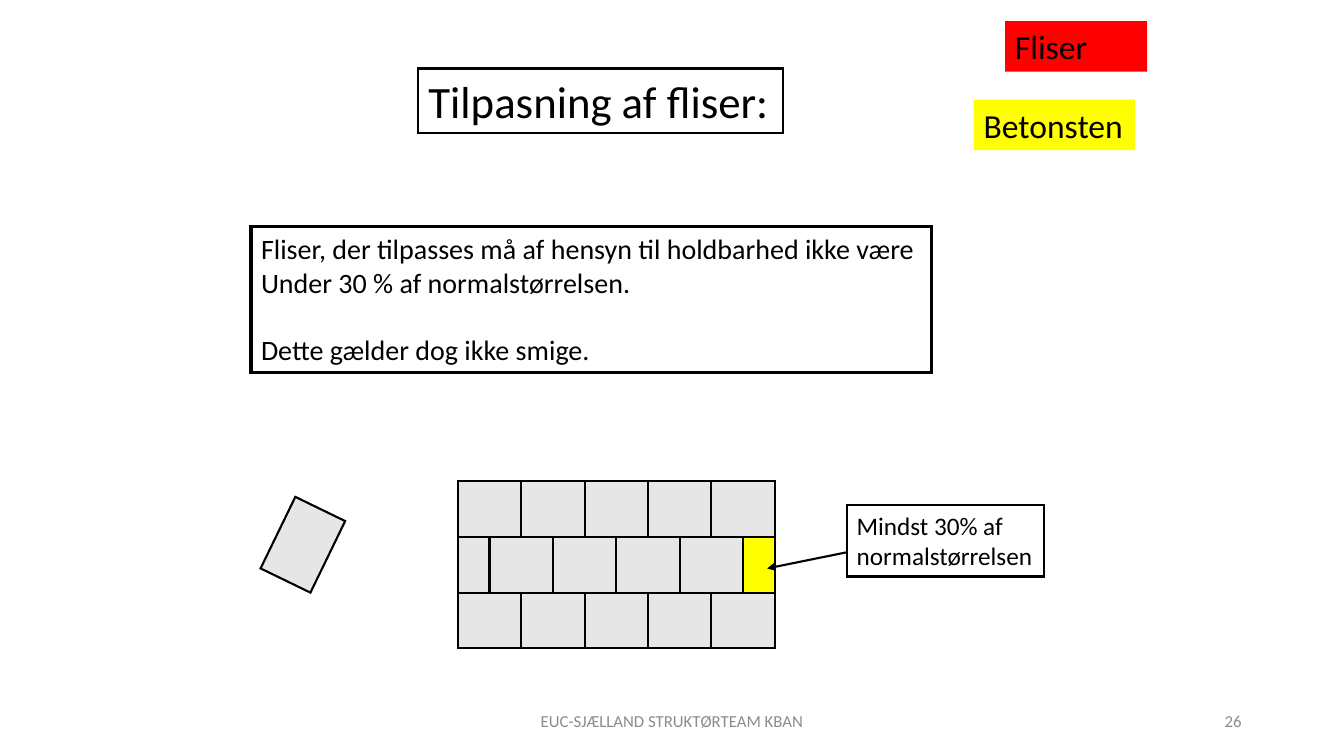
from dataclasses import dataclass
from typing import NamedTuple

from lxml import etree
from pptx import Presentation
from pptx import util as u
from pptx.dml.color import RGBColor
from pptx.enum import shapes, text
from pptx.oxml import ns


@dataclass(frozen=True)
class Theme:
    font: str = "Calibri"
    ink: str = "000000"
    muted: str = "8C8C8C"
    tile: str = "E7E6E6"
    red: str = "FF0000"
    yellow: str = "FFFF00"
    title: int = 32
    tag: int = 24
    body: int = 20
    note: int = 18
    footer: int = 12
    thin: float = 0.75
    line: float = 1.5
    thick: float = 2.25


class Box(NamedTuple):
    """Left, top, width and height in grid columns and rows."""
    x: float
    y: float
    w: float
    h: float


class Label(NamedTuple):
    words: str
    box: Box
    size: int
    fill: str | None = None
    line: float = 0
    wrap: bool = False
    fit: bool = True
    color: str = Theme.ink
    align: text.PP_ALIGN = text.PP_ALIGN.LEFT
    anchor: text.MSO_ANCHOR = text.MSO_ANCHOR.TOP


T = Theme()
COLUMNS, ROWS = 64, 36
WIDTH, HEIGHT = u.Inches(13.333), u.Inches(7.5)

TITLE = Label("Tilpasning af fliser:", Box(19.92, 3.26, 17.38, 3.07), T.title,
              line=T.line, fit=False)
RULE = Label(
    "Fliser, der tilpasses må af hensyn til holdbarhed ikke være\n"
    "Under 30 % af normalstørrelsen.\n"
    "Dette gælder dog ikke smige.",
    Box(11.95, 10.8, 32.4, 6.96), T.body, line=T.thick, fit=False)
FOOTER = dict(size=T.footer, wrap=True, fit=False, color=T.muted, anchor=text.MSO_ANCHOR.MIDDLE)
LABELS = [
    Label("Fliser", Box(47.86, 1.01, 6.77, 2.4), T.tag, fill=T.red, wrap=True),
    Label("Betonsten", Box(46.37, 4.75, 7.68, 2.4), T.tag, fill=T.yellow),
    Label("Mindst 30% af\nnormalstørrelsen", Box(40.32, 24.05, 9.41, 3.41), T.note, line=T.line),
    Label("EUC-SJÆLLAND STRUKTØRTEAM KBAN", Box(21.2, 33.37, 21.6, 1.92),
          align=text.PP_ALIGN.CENTER, **FOOTER),
    Label("26", Box(45.2, 33.37, 14.4, 1.92), align=text.PP_ALIGN.RIGHT, **FOOTER),
]

PAVING_X, PAVING_Y = 21.8, 22.9
TILE_W, TILE_H = 3.02, 2.66
COURSES = [[1] * 5, [0.5, 1, 1, 1, 1, 0.5], [1] * 5]  # tile widths in whole tiles
CUT_TILE = (1, 5)  # course and place of the highlighted tile
LOOSE_TILE = Box(12.53, 24.62, 3.79, 2.64)


def col(n: float) -> u.Emu:
    return u.Emu(round(WIDTH * n / COLUMNS))


def row(n: float) -> u.Emu:
    return u.Emu(round(HEIGHT * n / ROWS))


def place(box: Box) -> tuple[u.Emu, ...]:
    return col(box.x), row(box.y), col(box.w), row(box.h)


def paint(sp, fill: str | None, line: float) -> None:
    if fill:
        sp.fill.solid()
        sp.fill.fore_color.rgb = RGBColor.from_string(fill)
    else:
        sp.fill.background()
    if line:
        stroke(sp, line)
    else:
        sp.line.fill.background()


def stroke(sp, width: float) -> None:
    """Draw the outline in ink, with sharp corners."""
    sp.line.color.rgb = RGBColor.from_string(T.ink)
    sp.line.width = u.Pt(width)
    etree.SubElement(sp.line._get_or_add_ln(), ns.qn("a:miter"), lim="800000")


def write(sp, label: Label) -> None:
    """Place a text shape and give it the label's words and look."""
    sp.left, sp.top, sp.width, sp.height = place(label.box)
    paint(sp, label.fill, label.line)
    tf = sp.text_frame
    tf.text = label.words
    tf.word_wrap = label.wrap
    tf.auto_size = text.MSO_AUTO_SIZE.SHAPE_TO_FIT_TEXT if label.fit else text.MSO_AUTO_SIZE.NONE
    tf.vertical_anchor = label.anchor
    for p in tf.paragraphs:
        p.alignment = label.align
        p.space_before = u.Pt(0)
        for r in p.runs:
            r.font.name = T.font
            r.font.size = u.Pt(label.size)
            r.font.color.rgb = RGBColor.from_string(label.color)


def remove_bullets(sp) -> None:
    for p in sp.text_frame.paragraphs:
        props = p._p.get_or_add_pPr()
        props.set("marL", "0")
        props.set("indent", "0")
        etree.SubElement(props, ns.qn("a:buNone"))


def add_tile(s, box: Box, fill: str = T.tile, rotation: float = 0) -> None:
    sp = s.shapes.add_shape(shapes.MSO_SHAPE.RECTANGLE, *place(box))
    sp.shadow.inherit = False
    sp.rotation = rotation
    paint(sp, fill, T.line)


def add_paving(s) -> None:
    for i, course in enumerate(COURSES):
        for j, share in enumerate(course):
            box = Box(PAVING_X + sum(course[:j]) * TILE_W, PAVING_Y + i * TILE_H,
                      share * TILE_W, TILE_H)
            add_tile(s, box, T.yellow if (i, j) == CUT_TILE else T.tile)


def add_line(s, x1: float, y1: float, x2: float, y2: float, width: float,
             arrow: bool = False) -> None:
    c = s.shapes.add_connector(shapes.MSO_CONNECTOR.STRAIGHT, col(x1), row(y1), col(x2), row(y2))
    stroke(c, width)
    if arrow:
        etree.SubElement(c.line._get_or_add_ln(), ns.qn("a:tailEnd"), type="triangle")
    etree.SubElement(c._element.spPr, ns.qn("a:effectLst"))


def main() -> None:
    prs = Presentation()
    prs.slide_width, prs.slide_height = WIDTH, HEIGHT
    s = prs.slides.add_slide(prs.slide_layouts[1])

    write(s.shapes.title, TITLE)
    body = s.placeholders[1]
    write(body, RULE)
    remove_bullets(body)
    body.text_frame.paragraphs[-1].space_before = u.Pt(24)

    for label in LABELS:
        write(s.shapes.add_textbox(*place(label.box)), label)

    add_tile(s, LOOSE_TILE, rotation=295.9)
    add_paving(s)
    add_line(s, PAVING_X, PAVING_Y, PAVING_X, PAVING_Y + len(COURSES) * TILE_H, T.thin)
    add_line(s, 40.32, 26.3, 36.53, 27.07, T.line, arrow=True)
    prs.save("out.pptx")


if __name__ == "__main__":
    main()
